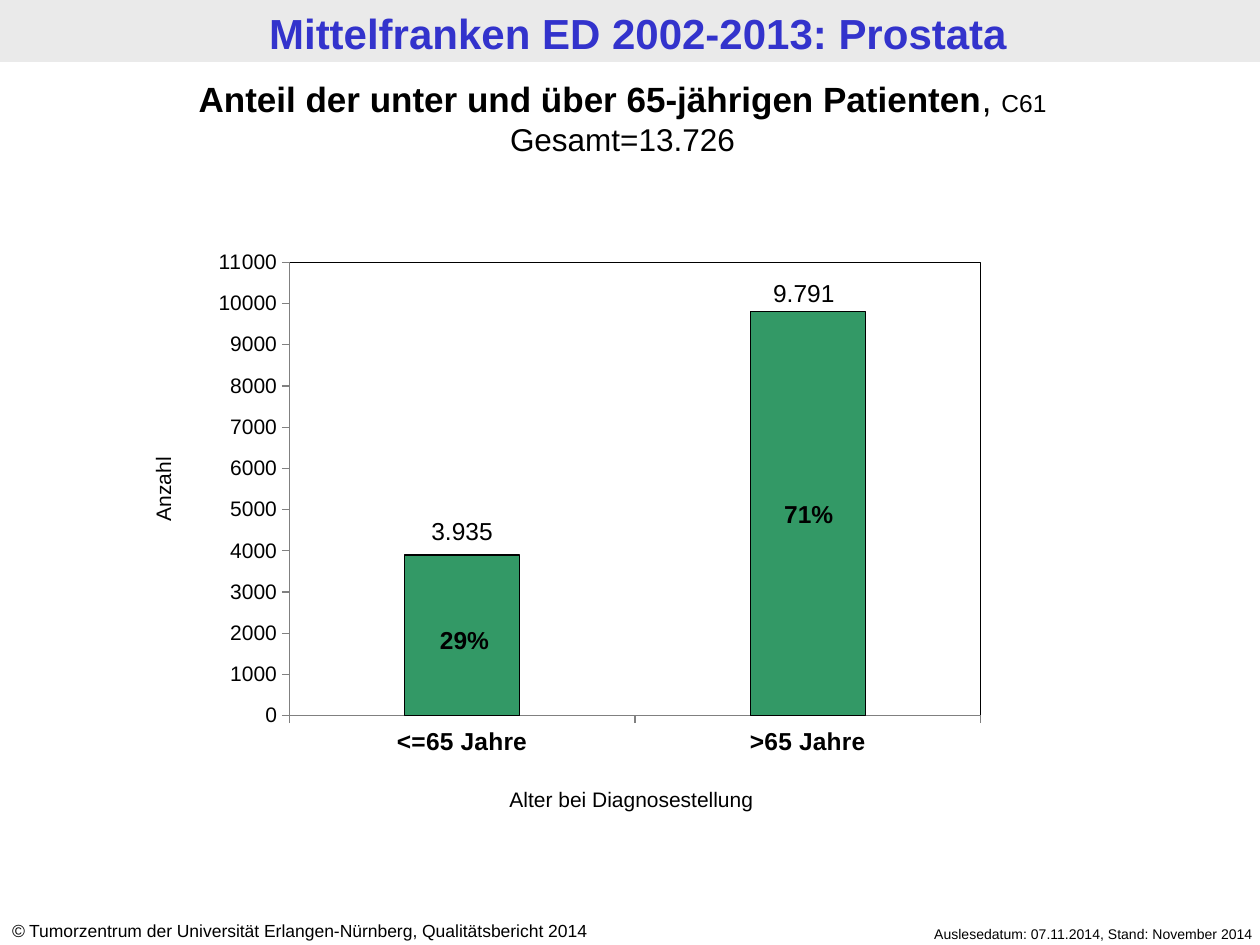
"""Build the slide on prostate cancer patients under and over 65 in Mittelfranken."""
from dataclasses import dataclass

import pptx
import pptx.chart.data
import pptx.dml.color
import pptx.enum.chart
import pptx.enum.shapes
import pptx.enum.text
import pptx.oxml
import pptx.oxml.ns
import pptx.util

Cm = pptx.util.Cm
Pt = pptx.util.Pt
Align = pptx.enum.text.PP_ALIGN
COLORS = {"band": "EAEAEA", "title": "3333CC", "text": "000000", "bar": "339966", "axis": "808080"}
FONT = "Arial"
PLOT_LAYOUT = {"x": 0.113, "y": 0.142, "w": 0.786, "h": 0.772}


@dataclass(frozen=True)
class Label:
    """A one-line text with its frame in centimetres."""
    text: str
    left: float
    top: float
    width: float
    height: float
    size: int = 14
    bold: bool = False
    align: Align = Align.CENTER
    rotation: int = 0


LABELS = (
    Label("29%", 8.11, 12.47, 2.51, 0.86, bold=True),
    Label("71%", 15.1, 9.93, 2.41, 0.86, bold=True),
    Label("3.935", 8.02, 10.28, 2.59, 0.86),
    Label("9.791", 14.91, 5.48, 2.59, 0.86),
    Label("Alter bei Diagnosestellung", 8.5, 15.74, 8.46, 0.76, size=12),
    Label("Anzahl", -0.03, 9.48, 6.63, 0.76, size=12, rotation=270),
    Label("Auslesedatum: 07.11.2014, Stand: November 2014", 16.9, 18.53, 8.61, 0.61,
          size=8, align=Align.RIGHT),
)


def rgb(name: str) -> pptx.dml.color.RGBColor:
    """Return the named palette colour."""
    return pptx.dml.color.RGBColor.from_string(COLORS[name])


def style_font(font, size: float, bold: bool = False, italic: bool = False,
               color: str = "text") -> None:
    """Set typeface, size, weight, slant and colour of a font."""
    font.name = FONT
    font.size = Pt(size)
    font.bold = bold
    font.italic = italic
    font.color.rgb = rgb(color)


def write(paragraph, text: str, align: Align = Align.CENTER, **font_format) -> None:
    """Append a formatted run to a paragraph."""
    paragraph.alignment = align
    run = paragraph.add_run()
    run.text = text
    style_font(run.font, **font_format)


def add_frame(slide, left: float, top: float, width: float, height: float, rotation: int = 0):
    """Add a wrapping text box and return its text frame."""
    box = slide.shapes.add_textbox(Cm(left), Cm(top), Cm(width), Cm(height))
    box.rotation = rotation
    box.text_frame.word_wrap = True
    return box.text_frame


def add_label(slide, label: Label) -> None:
    """Draw one label."""
    frame = add_frame(slide, label.left, label.top, label.width, label.height, label.rotation)
    write(frame.paragraphs[0], label.text, label.align, size=label.size, bold=label.bold)


def add_title(slide) -> None:
    """Fill the title placeholder and lay the grey band behind it."""
    title = slide.shapes.title
    title.left, title.top, title.width, title.height = Cm(0.16), Cm(0.03), Cm(25.4), Cm(1.24)
    title.text_frame.auto_size = pptx.enum.text.MSO_AUTO_SIZE.NONE
    write(title.text_frame.paragraphs[0], "Mittelfranken ED 2002-2013: Prostata",
          size=24, bold=True, color="title")
    band = slide.shapes.add_shape(pptx.enum.shapes.MSO_SHAPE.RECTANGLE, 0, 0, Cm(25.4), Cm(1.25))
    band.shadow.inherit = False
    band.fill.solid()
    band.fill.fore_color.rgb = rgb("band")
    band.line.fill.background()
    title.element.addprevious(band.element)


def frame_plot(chart) -> None:
    """Fix the inner plot area and outline it in black."""
    namespaces = pptx.oxml.ns.nsdecls("c", "a")
    plot_area = chart.element.find(".//" + pptx.oxml.ns.qn("c:plotArea"))
    for layout in plot_area.findall(pptx.oxml.ns.qn("c:layout")):
        plot_area.remove(layout)
    modes = "".join(f'<c:{side}Mode val="edge"/>' for side in "xy")
    sizes = "".join(f'<c:{side} val="{share}"/>' for side, share in PLOT_LAYOUT.items())
    plot_area.insert(0, pptx.oxml.parse_xml(
        f'<c:layout {namespaces}><c:manualLayout><c:layoutTarget val="inner"/>'
        f'{modes}{sizes}</c:manualLayout></c:layout>'))
    plot_area.append(pptx.oxml.parse_xml(
        f'<c:spPr {namespaces}><a:noFill/><a:ln w="{Pt(0.75)}"><a:solidFill>'
        f'<a:srgbClr val="{COLORS["text"]}"/></a:solidFill></a:ln></c:spPr>'))


def add_age_chart(slide) -> None:
    """Add the column chart of patients by age group."""
    ages = pptx.chart.data.CategoryChartData()
    ages.categories = ["<=65 Jahre", ">65 Jahre"]
    ages.add_series("Series 1", (3900, 9800))
    chart = slide.shapes.add_chart(
        pptx.enum.chart.XL_CHART_TYPE.COLUMN_STACKED,
        Cm(3.83), Cm(3.61), Cm(17.73), Cm(11.84), ages).chart
    chart.has_title = False
    chart.has_legend = False
    style_font(chart.font, 18)

    plot = chart.plots[0]
    plot.gap_width = 200
    plot.overlap = 100
    plot.vary_by_categories = False
    bars = plot.series[0].format
    bars.fill.solid()
    bars.fill.fore_color.rgb = rgb("bar")
    bars.line.color.rgb = rgb("text")
    bars.line.width = Pt(0.75)

    for axis, size, bold in ((chart.category_axis, 14, True), (chart.value_axis, 12, False)):
        axis.has_major_gridlines = False
        axis.major_tick_mark = pptx.enum.chart.XL_TICK_MARK.OUTSIDE
        axis.minor_tick_mark = pptx.enum.chart.XL_TICK_MARK.NONE
        axis.format.line.color.rgb = rgb("axis")
        axis.format.line.width = Pt(0.75)
        style_font(axis.tick_labels.font, size, bold)
    chart.value_axis.minimum_scale = 0
    chart.value_axis.maximum_scale = 11000
    chart.value_axis.major_unit = 1000
    frame_plot(chart)


def add_subtitle(slide) -> None:
    """Add the heading of the chart with the total below it."""
    frame = add_frame(slide, 0, 1.44, 25.1, 1.88)
    heading = frame.paragraphs[0]
    write(heading, "Anteil der unter und über 65-jährigen Patienten", size=20, bold=True)
    write(heading, ", ", size=20)
    write(heading, "C61", size=14)
    write(frame.add_paragraph(), "Gesamt=13.726", size=18)


def add_copyright(slide) -> None:
    """Add the copyright line."""
    line = add_frame(slide, -0.01, 18.43, 13.31, 0.69).paragraphs[0]
    write(line, "©", Align.LEFT, size=10, italic=True)
    write(line, " Tumorzentrum der Universität Erlangen-Nürnberg, Qualitätsbericht 2014",
          Align.LEFT, size=10)


def main() -> None:
    """Build and save the presentation."""
    presentation = pptx.Presentation()
    presentation.slide_width, presentation.slide_height = Cm(25.4), Cm(19.05)
    slide = presentation.slides.add_slide(presentation.slide_layouts[5])
    add_title(slide)
    add_age_chart(slide)
    add_subtitle(slide)
    add_copyright(slide)
    for label in LABELS:
        add_label(slide, label)
    presentation.save("out.pptx")


if __name__ == "__main__":
    main()
